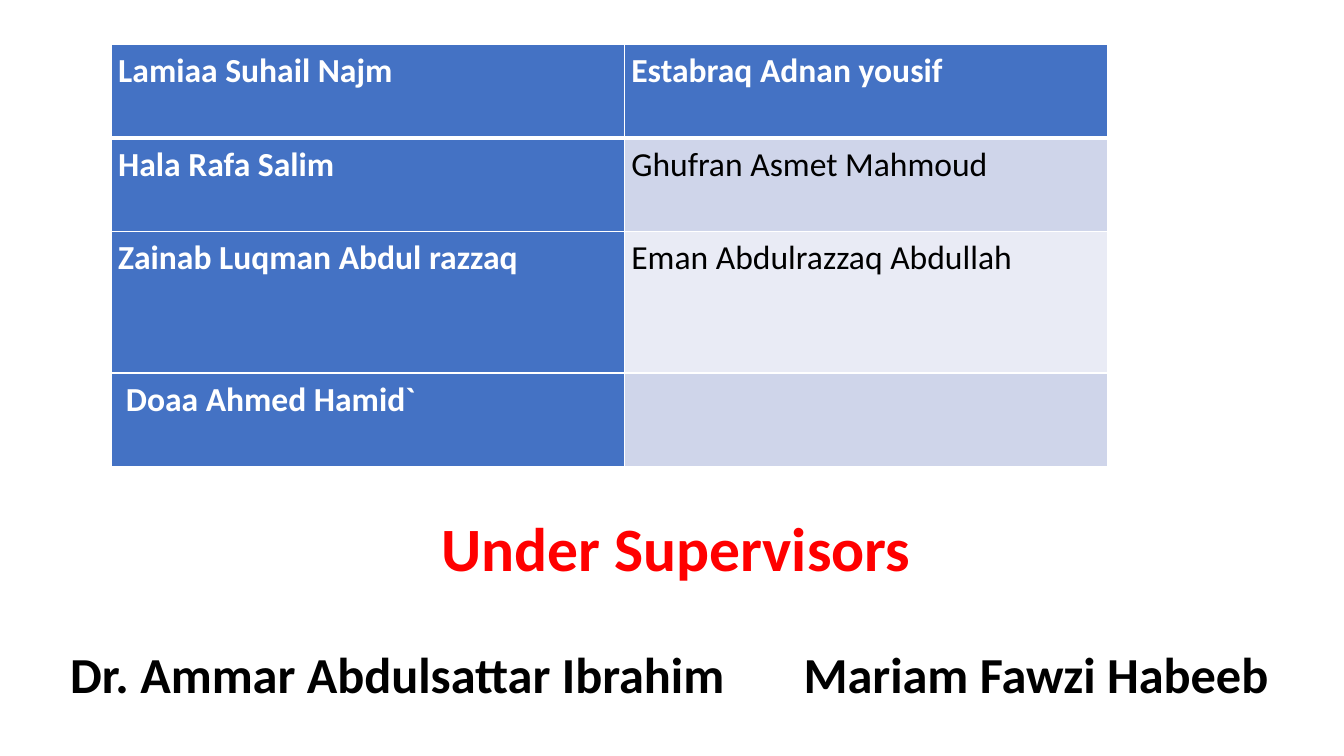
from lxml import etree
from pptx import Presentation
from pptx.dml.color import RGBColor
from pptx.enum.text import MSO_ANCHOR, PP_ALIGN
from pptx.oxml.ns import qn
from pptx.util import Cm, Pt

TOP = MSO_ANCHOR.TOP
LEFT, CENTER = PP_ALIGN.LEFT, PP_ALIGN.CENTER

BLUE, WHITE, BLACK, RED = "4472C4", "FFFFFF", "000000", "FF0000"
BANDS = ["CFD5EA", "E9EBF5"]

NAMES = [
    ("Lamiaa Suhail Najm", "Estabraq Adnan yousif"),
    ("Hala Rafa Salim", "Ghufran Asmet Mahmoud"),
    ("Zainab Luqman Abdul razzaq", "Eman Abdulrazzaq Abdullah"),
    (" Doaa Ahmed Hamid`", ""),
]
WIDTHS = [12.93, 12.19]
HEIGHTS = [2.36, 2.36, 3.56, 2.36]


def color(code):
    return RGBColor.from_string(code)


def set_all(item, values):
    for name, value in values.items():
        setattr(item, name, value)


def style(para, size, ink, bold, **layout):
    set_all(para, layout)
    set_all(para.font, {"name": "Calibri", "size": Pt(size), "bold": bold})
    para.font.color.rgb = color(ink)


def add_edge(cell, side, width):
    props = cell._tc.get_or_add_tcPr()
    line = etree.SubElement(props, qn("a:ln" + side), w=str(Pt(width)))
    fill = etree.SubElement(line, qn("a:solidFill"))
    etree.SubElement(fill, qn("a:srgbClr"), val=WHITE)


def fill_cell(cell, text, row, col):
    # Header row and first column are blue; the rest is banded
    head = row == 0 or col == 0
    set_all(cell, {"margin_left": Cm(0.18), "margin_right": Cm(0.18),
                   "margin_top": 0, "margin_bottom": 0})
    edges = {"L": 1, "R": 1, "T": 3 if row == 1 else 1,
             "B": 3 if row == 0 else 1}
    for side, width in edges.items():
        add_edge(cell, side, width)
    cell.fill.solid()
    cell.fill.fore_color.rgb = color(BLUE if head else BANDS[(row - 1) % 2])
    cell.text = text
    style(cell.text_frame.paragraphs[0], 24, WHITE if head else BLACK, head,
          line_spacing=1.15)


def add_names(slide):
    frame = slide.shapes.add_table(
        len(NAMES), len(WIDTHS), Cm(2.8), Cm(1.12),
        Cm(sum(WIDTHS)), Cm(sum(HEIGHTS)))
    table = frame.table
    for column, width in zip(table.columns, WIDTHS):
        column.width = Cm(width)
    for line, height in zip(table.rows, HEIGHTS):
        line.height = Cm(height)
    for row, pair in enumerate(NAMES):
        for col, text in enumerate(pair):
            fill_cell(table.cell(row, col), text, row, col)


def add_tab(para, place):
    tabs = etree.SubElement(para._p.get_or_add_pPr(), qn("a:tabLst"))
    etree.SubElement(tabs, qn("a:tab"), pos=str(Cm(place)), algn="l")


def add_title(slide):
    box = slide.shapes.add_textbox(Cm(1.07), Cm(12.75), Cm(31.85), Cm(5.97))
    frame = box.text_frame
    set_all(frame, {"word_wrap": True, "vertical_anchor": TOP,
                    "margin_left": Cm(0.7), "margin_right": Cm(0.6),
                    "margin_top": Cm(0.3)})
    head = frame.paragraphs[0]
    head.text = "Under Supervisors"
    style(head, 44, RED, True, alignment=CENTER, line_spacing=0.9)

    # Both supervisors share a line, parted by a tab stop
    staff = frame.add_paragraph()
    staff.text = "Dr. Ammar Abdulsattar Ibrahim\tMariam Fawzi Habeeb"
    add_tab(staff, 18.48)
    style(staff, 36, BLACK, True, alignment=LEFT, line_spacing=0.9,
          space_before=Pt(47))


def main():
    deck = Presentation()
    set_all(deck, {"slide_width": Cm(33.87), "slide_height": Cm(19.05)})
    slide = deck.slides.add_slide(deck.slide_layouts[6])
    add_title(slide)
    add_names(slide)
    deck.save("out.pptx")


if __name__ == "__main__":
    main()
